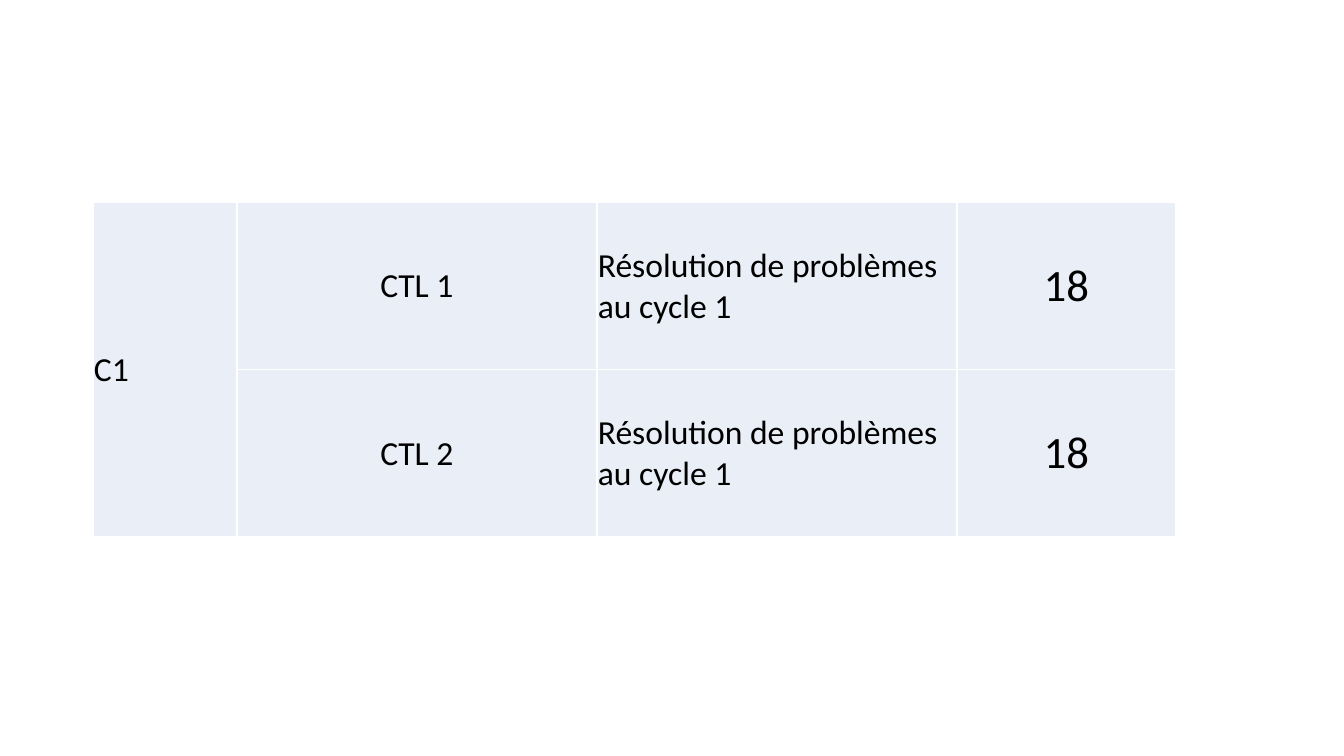
from lxml import etree
from pptx import Presentation, util as u
from pptx.dml.color import RGBColor
from pptx.enum import text
from pptx.oxml import ns

PX = 914400 / 100.8  # EMU in one px
COLS = [144, 360, 360, 219]
LEFT, MID = text.PP_ALIGN.LEFT, text.PP_ALIGN.CENTER
LOOKS = [(LEFT, 24), (MID, 24), (LEFT, 24), (MID, 32)]
TOPIC = "Résolution de problèmes au cycle 1"
ROWS = [["C1", "CTL 1", TOPIC, "18"],
        ["", "CTL 2", TOPIC, "18"]]


def px(n):
    return u.Emu(round(n * PX))


def color(code):
    return RGBColor.from_string(code)


def border(cell, code, width):
    props = cell._tc.get_or_add_tcPr()
    for side in ("lnL", "lnR", "lnT", "lnB"):
        line = etree.SubElement(props, ns.qn("a:" + side), w=str(u.Pt(width)))
        fill = etree.SubElement(line, ns.qn("a:solidFill"))
        etree.SubElement(fill, ns.qn("a:srgbClr"), val=code)


def style(cell, words, align, size):
    border(cell, "FFFFFF", 1)
    cell.fill.solid()
    cell.fill.fore_color.rgb = color("EAEFF7")
    cell.margin_left = cell.margin_right = cell.margin_top = px(1)
    cell.margin_bottom = 0
    cell.vertical_anchor = text.MSO_ANCHOR.MIDDLE
    cell.text = words
    para = cell.text_frame.paragraphs[0]
    para.alignment = align
    para.font.name = "Calibri"
    para.font.size = u.Pt(size)
    para.font.color.rgb = color("000000")


def plan(slide, left, top, width, height):
    """Course table: one cycle beside its two sessions."""
    box = [px(n) for n in (left, top, width, height)]
    table = slide.shapes.add_table(len(ROWS), len(COLS), *box).table
    table.first_row = table.horz_banding = False
    # Column widths and equal rows
    for col, size in zip(table.columns, COLS):
        col.width = px(size * width / sum(COLS))
    for row in table.rows:
        row.height = px(height / len(ROWS))
    # Cells
    for r, row in enumerate(ROWS):
        for c, words in enumerate(row):
            style(table.cell(r, c), words, *LOOKS[c])
    table.cell(0, 0).merge(table.cell(1, 0))


def main():
    deck = Presentation()
    deck.slide_width, deck.slide_height = px(1344), px(756)
    slide = deck.slides.add_slide(deck.slide_layouts[6])
    plan(slide, 93, 202, 1083, 335)
    deck.save("out.pptx")


if __name__ == "__main__":
    main()
